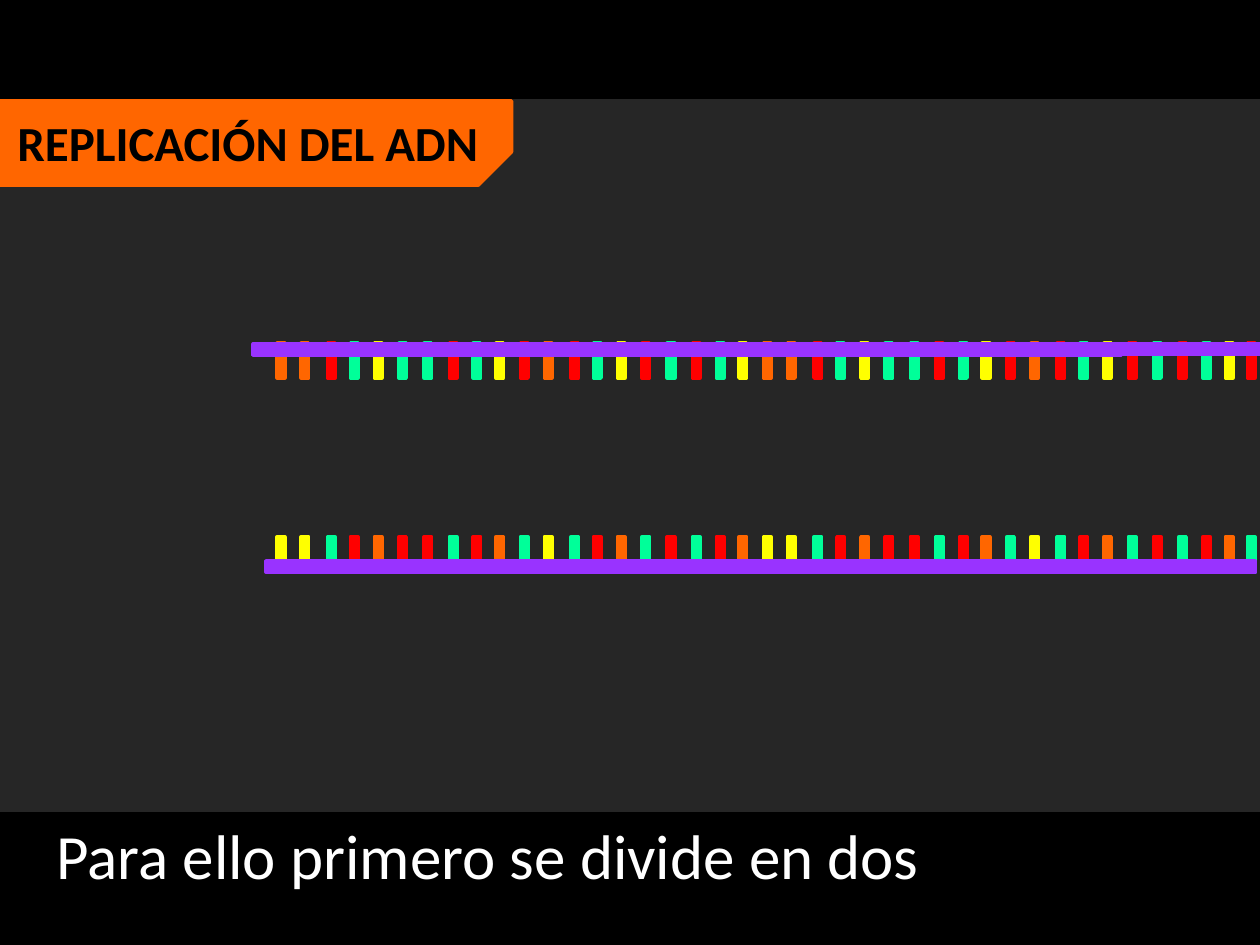
"""Build the DNA replication slide: two strands split apart."""
from pptx import Presentation
from pptx.dml.color import RGBColor
from pptx.enum.shapes import MSO_SHAPE as Kind
from pptx.enum.text import MSO_AUTO_SIZE as Fit
from pptx.util import Pt

BLACK = RGBColor(0x00, 0x00, 0x00)
WHITE = RGBColor(0xFF, 0xFF, 0xFF)
GREY = RGBColor(0x26, 0x26, 0x26)
ORANGE = RGBColor(0xFF, 0x66, 0x00)
RED = RGBColor(0xFF, 0x00, 0x00)
GREEN = RGBColor(0x00, 0xFF, 0x99)
YELLOW = RGBColor(0xFF, 0xFF, 0x00)
PURPLE = RGBColor(0x99, 0x33, 0xFF)

TITLE = {
    "text": "REPLICACIÓN DEL ADN", "box": (2.88, 60.48, 280.8, 41.04), "wrap": False,
    "font": {"name": "Calibri", "size": Pt(28), "bold": True},
    "color": BLACK,
}
NOTE = {
    "text": "Para ello primero se divide en dos", "box": (25.2, 462.96, 640.8, 51.12), "wrap": True,
    "font": {"name": "Calibri", "size": Pt(36), "bold": False},
    "color": WHITE,
}
BASES = {"O": ORANGE, "R": RED, "G": GREEN, "Y": YELLOW}
PAIRS = {"O": "Y", "Y": "O", "R": "G", "G": "R"}
CODONS = ["OORGY", "GGRGY", "RORGY", "RGRGY"] * 2

PITCH = 69.48
START = 150.48
STEPS = [(0, 13.68, 28.8, 41.76, 55.44), (0, 14.4, 28.8, 42.48, 55.44)]
LAST = ("R", 704.88)
RUNG = (20.16, 4.32)
RUNG_TOP, RUNG_LOW = 203.76, 314.64
SPINE = (79.2, 6.48)
SPINE_TOP, SPINE_LOW = 196.56, 320.4
TOP_X, TOP_STEP = 144.72, 66.24
LOW_X = 151.92


def add_box(slide, box, color, kind=Kind.RECTANGLE, turn=0):
    shape = slide.shapes.add_shape(kind, *map(Pt, box))
    shape.shadow.inherit = False
    shape.rotation = turn
    shape.fill.solid()
    shape.fill.fore_color.rgb = color
    shape.line.color.rgb = color
    shape.line.width = Pt(2)
    return shape


def add_text(slide, item):
    frame = slide.shapes.add_textbox(*map(Pt, item["box"])).text_frame
    frame.word_wrap = item["wrap"]
    frame.auto_size = Fit.SHAPE_TO_FIT_TEXT
    run = frame.paragraphs[0].add_run()
    run.text = item["text"]
    for key, value in item["font"].items():
        setattr(run.font, key, value)
    run.font.color.rgb = item["color"]


def add_strands(slide):
    rungs = [
        (base, START + PITCH * i + step)
        for i, codon in enumerate(CODONS)
        for base, step in zip(codon, STEPS[i % 2])
    ]
    for base, x in rungs + [LAST]:
        add_box(slide, (x, RUNG_TOP, *RUNG), BASES[base], turn=90)
        add_box(slide, (x, RUNG_LOW, *RUNG), BASES[PAIRS[base]], turn=90)

    for i in range(len(CODONS)):
        add_box(slide, (LOW_X + PITCH * i, SPINE_LOW, *SPINE), PURPLE)
        x = TOP_X + 2 * PITCH * (i // 2) + TOP_STEP * (i % 2)
        size = SPINE if i < len(CODONS) - 1 else (720 - x, 5.76)
        add_box(slide, (x, SPINE_TOP, *size), PURPLE)


def main():
    deck = Presentation()
    deck.slide_width, deck.slide_height = Pt(720), Pt(540)
    slide = deck.slides.add_slide(deck.slide_layouts[6])
    slide.background.fill.solid()
    slide.background.fill.fore_color.rgb = BLACK

    add_box(slide, (0, 57.6, 720, 405.36), GREY)
    tag = add_box(slide, (0, 57.6, 292.32, 48.24), ORANGE, Kind.SNIP_1_RECTANGLE, 180)
    tag.adjustments[0] = 0.395
    tag._element.spPr.xfrm.set("flipH", "1")
    add_text(slide, TITLE)
    add_strands(slide)
    add_text(slide, NOTE)
    deck.save("out.pptx")


if __name__ == "__main__":
    main()
